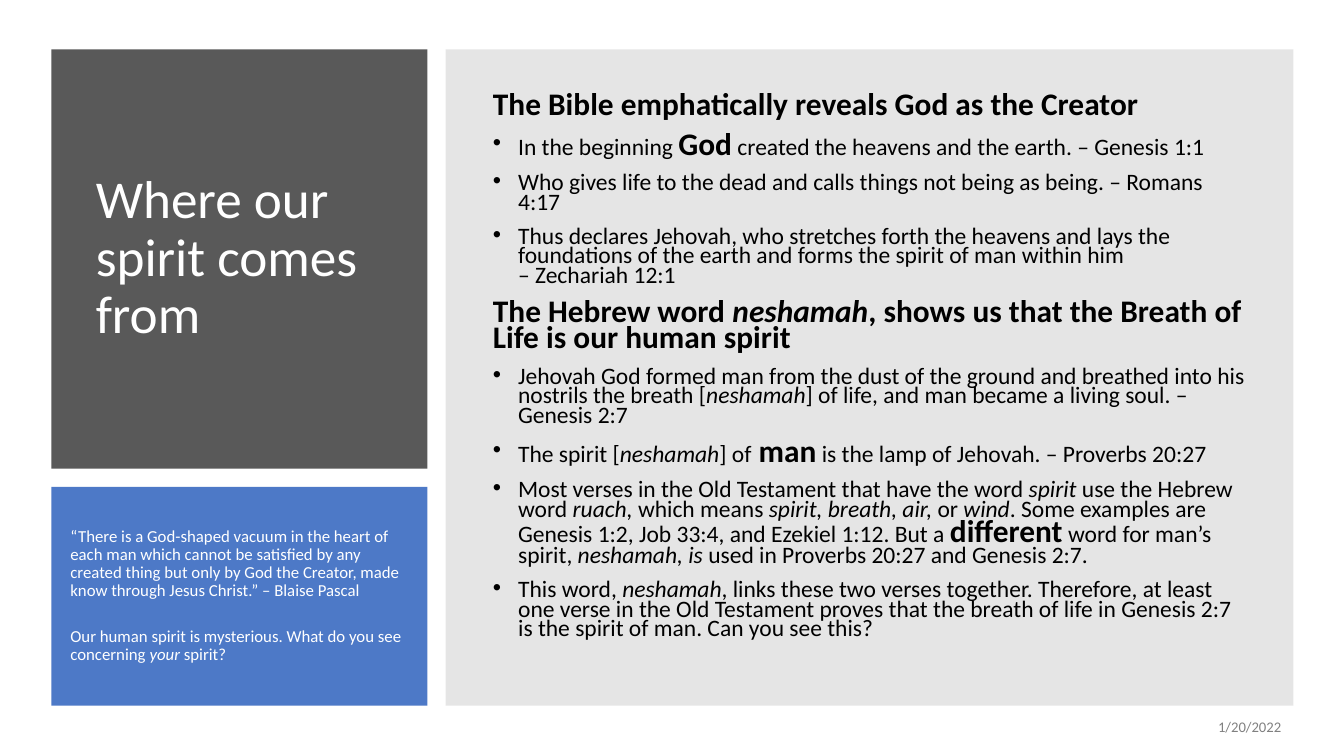
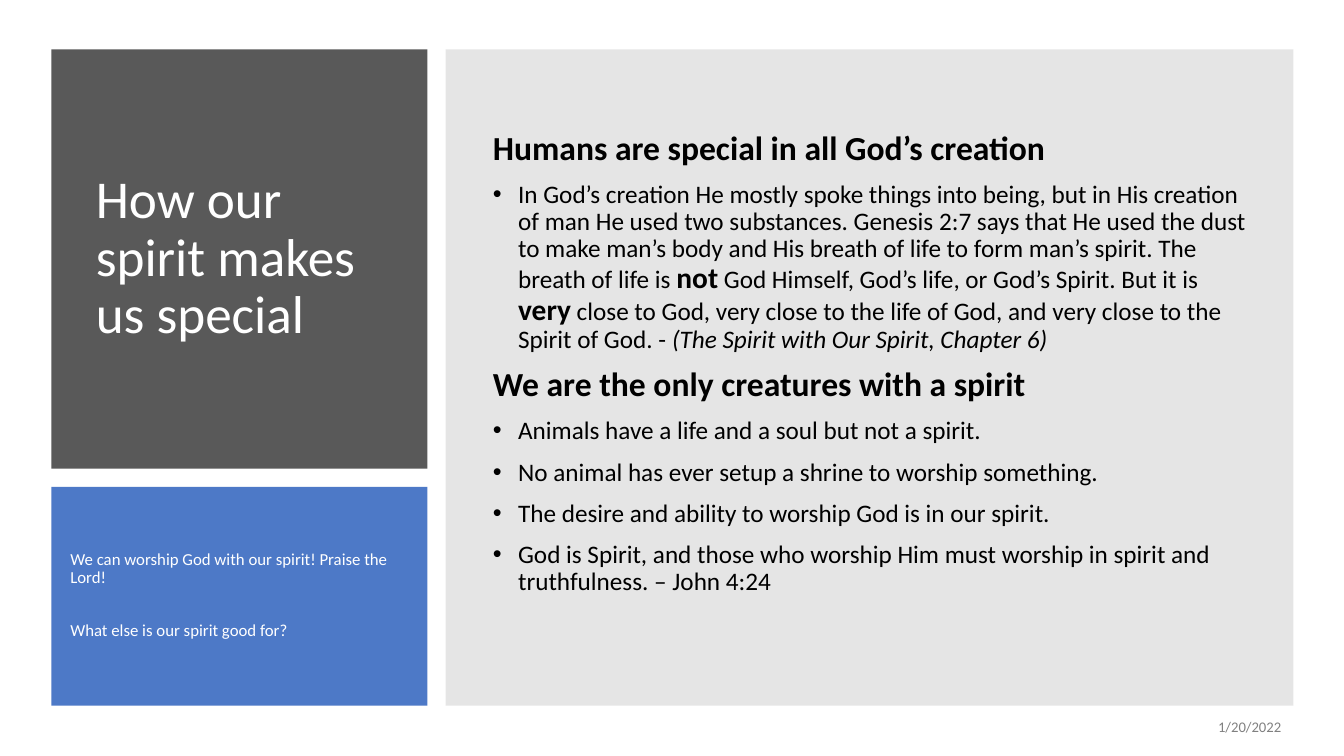
from dataclasses import dataclass

from lxml import etree
from pptx import Presentation
from pptx import util as u
from pptx.dml import color
from pptx.enum import shapes, text
from pptx.oxml import ns


@dataclass(frozen=True)
class Theme:
    font: str = "Calibri"
    white: str = "FFFFFF"
    black: str = "000000"
    dark: str = "595959"
    blue: str = "4472C4"
    gray: str = "808080"
    title: float = 38
    side: float = 12
    date: float = 10.5
    indent: float = 18


@dataclass(frozen=True)
class BodyStyle:
    head: float
    item: float
    strong: float
    spacing: float
    bottom: float


T = Theme()
LEFT, TOP, RIGHT, BOTTOM, GAP = 36.7, 35.3, 923.8, 504, 13
SIDE_W, TITLE_H = 268.6, 299.5
SIDE_TOP = TOP + TITLE_H + GAP
BODY_LEFT = LEFT + SIDE_W + GAP

TITLE_BOX = (61.2, 57.6, 223.9, 254.9)
BODY_BOX = (344.9, 54, 554.4, 431.3)
SIDE_BOX = (43.2, 353.5, 256.3, 144)
DATE_BOX = (706.3, 504.7, 216, 28.8)

SLIDES = [
    dict(
        title="Where our spirit comes from",
        style=BodyStyle(22.4, 16.8, 22.4, 0.7, 18),
        sections=[
            ("The Bible emphatically reveals God as the Creator", [
                "In the beginning *God* created the heavens and the earth. – Genesis 1:1",
                "Who gives life to the dead and calls things not being as being. – Romans 4:17",
                "Thus declares Jehovah, who stretches forth the heavens and lays the "
                "foundations of the earth and forms the spirit of man within him\n"
                "– Zechariah 12:1",
            ]),
            ("The Hebrew word _neshamah_, shows us that the Breath of Life is our human spirit", [
                "Jehovah God formed man from the dust of the ground and breathed into his "
                "nostrils the breath [_neshamah_] of life, and man became a living soul. "
                "– Genesis 2:7",
                "The spirit [_neshamah_] of* man* is the lamp of Jehovah. – Proverbs 20:27",
                "Most verses in the Old Testament that have the word _spirit_ use the Hebrew "
                "word _ruach, _which means _spirit, breath, air, _or_ wind_. Some examples "
                "are Genesis 1:2, Job 33:4, and Ezekiel 1:12. But a *different* word for "
                "man’s spirit, _neshamah, is _used in Proverbs 20:27 and Genesis 2:7.",
                "This word, _neshamah_, links these two verses together. Therefore, at least "
                "one verse in the Old Testament proves that the breath of life in Genesis 2:7 "
                "is the spirit of man. Can you see this?",
            ]),
        ],
        side=[
            "“There is a God-shaped vacuum in the heart of each man which cannot be "
            "satisfied by any created thing but only by God the Creator, made know "
            "through Jesus Christ.” – Blaise Pascal",
            "Our human spirit is mysterious. What do you see concerning _your_ spirit?",
        ],
        side_gap=13.7,
    ),
    dict(
        title="How our spirit makes us special",
        style=BodyStyle(24, 18, 21, 0.9, 23.4),
        sections=[
            ("Humans are special in all God’s creation", [
                "In God’s creation He mostly spoke things into being, but in His creation of "
                "man He used two substances. Genesis 2:7 says that He used the dust to make "
                "man’s body and His breath of life to form man’s spirit. The breath of life "
                "is *not* God Himself, God’s life, or God’s Spirit. But it is *very* close "
                "to God, very close to the life of God, and very close to the Spirit of God. "
                "- _(The Spirit with Our Spirit, Chapter 6)_",
            ]),
            ("We are the only creatures with a spirit", [
                "Animals have a life and a soul but not a spirit.",
                "No animal has ever setup a shrine to worship something.",
                "The desire and ability to worship God is in our spirit.",
                "God is Spirit, and those who worship Him must worship in spirit and "
                "truthfulness. – John 4:24",
            ]),
        ],
        side=[
            "We can worship God with our spirit! Praise the Lord!",
            "What else is our spirit good for?",
        ],
        side_gap=19.2,
    ),
]


def rgb(value):
    return color.RGBColor.from_string(value)


def add_panel(s, x, y, w, h, fill, alpha=None):
    sp = s.shapes.add_shape(shapes.MSO_SHAPE.RECTANGLE, *map(u.Pt, (x, y, w, h)))
    sp.shadow.inherit = False
    sp.fill.solid()
    sp.fill.fore_color.rgb = rgb(fill)
    sp.line.fill.background()
    if alpha is not None:
        clr = sp.element.spPr.find(".//" + ns.qn("a:srgbClr"))
        etree.SubElement(clr, ns.qn("a:alpha"), val=str(alpha * 1000))


def set_bullet(p, bullet):
    pPr = p._p.get_or_add_pPr()
    indent = u.Pt(T.indent) if bullet else 0
    pPr.set("marL", str(indent))
    pPr.set("indent", str(-indent))
    if bullet:
        etree.SubElement(pPr, ns.qn("a:buFont"), typeface="Arial")
        etree.SubElement(pPr, ns.qn("a:buChar"), char="•")
    else:
        etree.SubElement(pPr, ns.qn("a:buNone"))


def add_text(tf, content, size, fill, strong=None, bold=False, bullet=False,
             spacing=0.9, before=0, after=0, align=text.PP_ALIGN.LEFT):
    p = tf.add_paragraph() if tf.text else tf.paragraphs[0]
    p.alignment = align
    p.line_spacing = spacing
    p.space_before, p.space_after = u.Pt(before), u.Pt(after)
    set_bullet(p, bullet)
    for i, chunk in enumerate(content.split("*")):
        for j, piece in enumerate(chunk.split("_")):
            for k, line in enumerate(piece.split("\n")):
                if k:
                    p.add_line_break()
                if not line:
                    continue
                r = p.add_run()
                r.text = line
                r.font.name = T.font
                r.font.size = u.Pt(strong if i % 2 else size)
                r.font.bold = bold or i % 2 == 1
                r.font.italic = j % 2 == 1
                r.font.color.rgb = rgb(fill)


def setup_frame(sp, box):
    sp.left, sp.top, sp.width, sp.height = map(u.Pt, box)
    tf = sp.text_frame
    tf.word_wrap = True
    tf.auto_size = text.MSO_AUTO_SIZE.NONE
    tf.vertical_anchor = text.MSO_ANCHOR.MIDDLE
    return tf


def add_placeholder_frame(s, sp, box):
    s.shapes.element.append(sp.element)
    return setup_frame(sp, box)


def add_box_frame(s, box):
    return setup_frame(s.shapes.add_textbox(*map(u.Pt, box)), box)


def add_panels(s):
    add_panel(s, LEFT, TOP, SIDE_W, TITLE_H, T.dark)
    add_panel(s, LEFT, SIDE_TOP, SIDE_W, BOTTOM - SIDE_TOP, T.blue, 95)
    add_panel(s, BODY_LEFT, TOP, RIGHT - BODY_LEFT, BOTTOM - TOP, T.gray, 20)


def add_body(s, sections, style):
    tf = add_placeholder_frame(s, s.placeholders[1], BODY_BOX)
    tf.margin_bottom = u.Pt(style.bottom)
    for head, items in sections:
        add_text(tf, head, style.head, T.black, bold=True,
                 spacing=style.spacing, before=10)
        for item in items:
            add_text(tf, item, style.item, T.black, strong=style.strong,
                     bullet=True, spacing=style.spacing, before=10)


def add_side(s, lines, gap):
    tf = add_box_frame(s, SIDE_BOX)
    for i, line in enumerate(lines):
        add_text(tf, line, T.side, T.white, before=gap if i else 0, after=6)


def build_slide(prs, title, style, sections, side, side_gap):
    s = prs.slides.add_slide(prs.slide_layouts[1])
    add_panels(s)
    add_text(add_placeholder_frame(s, s.shapes.title, TITLE_BOX),
             title, T.title, T.white)
    add_body(s, sections, style)
    add_side(s, side, side_gap)
    add_text(add_box_frame(s, DATE_BOX), "1/20/2022", T.date, T.gray,
             spacing=1.0, after=6, align=text.PP_ALIGN.RIGHT)


def main():
    prs = Presentation()
    prs.slide_width, prs.slide_height = u.Pt(960), u.Pt(540)
    for content in SLIDES:
        build_slide(prs, **content)
    prs.save("out.pptx")


if __name__ == "__main__":
    main()
